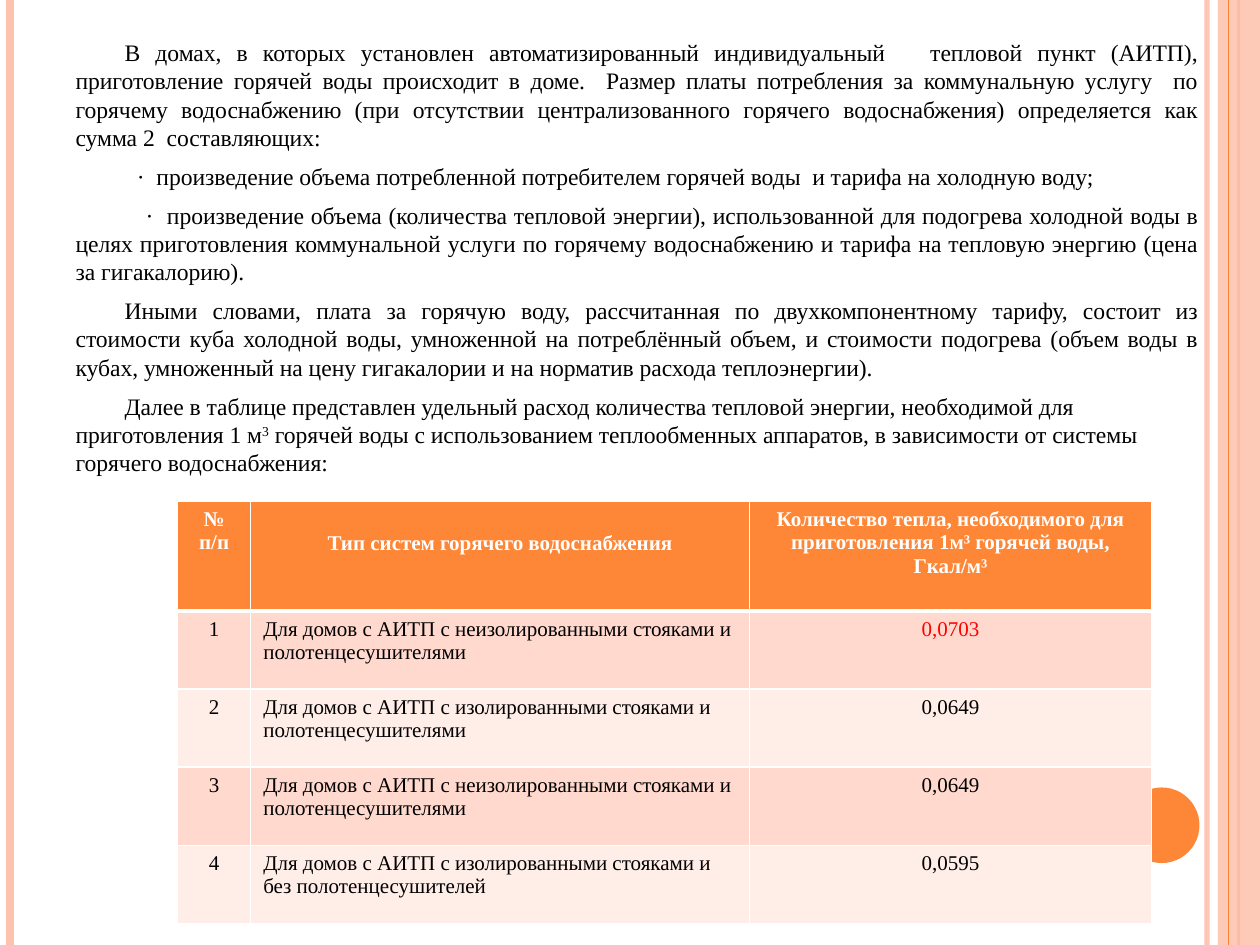
from dataclasses import dataclass

from lxml import etree
from pptx import Presentation
from pptx import util as u
from pptx.dml import color
from pptx.enum import shapes, text
from pptx.oxml import ns

Pt = u.Pt
FONT = "Times New Roman"
ORANGE, PEACH, WHITE, BLACK, RED = "FE8637", "FEC3AE", "FFFFFF", "000000", "FF0000"
BANDS = ("FFD9CE", "FFEDE8")
LEFT, CENTER, JUSTIFY = text.PP_ALIGN.LEFT, text.PP_ALIGN.CENTER, text.PP_ALIGN.JUSTIFY


@dataclass
class Stripe:
    x: float
    width: float
    hue: str
    opacity: int = 100


@dataclass
class Span:
    words: str
    raised: bool = False


@dataclass
class Para:
    spans: list[Span]
    indent: float = 28
    align: text.PP_ALIGN = JUSTIFY


@dataclass
class Cell:
    words: str
    fill: str
    hue: str = BLACK
    bold: bool = False
    align: text.PP_ALIGN = CENTER
    top: float = 3.6
    bottom_line: float = 1


STRIPES = [
    Stripe(689.76, 3, PEACH, 93),
    Stripe(5.76, 4.5, PEACH),
    Stripe(707.76, 1.5, ORANGE),
    Stripe(702, 0.75, ORANGE),
]

PARAS = [
    Para([Span("В домах, в которых установлен автоматизированный индивидуальный   тепловой пункт (АИТП), приготовление горячей воды происходит в доме.  Размер платы потребления за коммунальную услугу  по горячему водоснабжению (при отсутствии централизованного горячего водоснабжения) определяется как сумма 2  составляющих:")]),
    Para([Span("·  произведение объема потребленной потребителем горячей воды  и тарифа на холодную воду;")], 35),
    Para([Span("·  произведение объема (количества тепловой энергии), использованной для подогрева холодной воды в целях приготовления коммунальной услуги по горячему водоснабжению и тарифа на тепловую энергию (цена за гигакалорию).")], 40),
    Para([Span("Иными словами, плата за горячую воду, рассчитанная по двухкомпонентному тарифу, состоит из стоимости куба холодной воды, умноженной на потреблённый объем, и стоимости подогрева (объем воды в кубах, умноженный на цену гигакалории и на норматив расхода теплоэнергии).")]),
    Para([
        Span("Далее в таблице представлен удельный расход количества тепловой энергии, необходимой для приготовления 1 м"),
        Span("3", raised=True),
        Span(" горячей воды с использованием теплообменных аппаратов, в зависимости от системы горячего водоснабжения:"),
    ], align=LEFT),
]

HEADERS = [
    ("№ п/п", 3.6),
    ("Тип систем горячего водоснабжения", 17.4),
    ("Количество тепла, необходимого для приготовления 1м³ горячей воды, Гкал/м³", 3.6),
]
SYSTEMS = [
    ("с неизолированными стояками и полотенцесушителями", "0,0703", RED),
    ("с изолированными стояками и полотенцесушителями", "0,0649", BLACK),
    ("с неизолированными стояками и полотенцесушителями", "0,0649", BLACK),
    ("с изолированными стояками и без полотенцесушителей", "0,0595", BLACK),
]
COLUMN_WIDTHS = (41.76, 285.12, 229.68)
ROW_HEIGHTS = (62.64,) + (44.64,) * len(SYSTEMS)


def rgb(value: str) -> color.RGBColor:
    return color.RGBColor.from_string(value)


def set_opacity(element, percent: int) -> None:
    for tone in element.iter(ns.qn("a:srgbClr")):
        etree.SubElement(tone, ns.qn("a:alpha"), val=str(percent * 1000))


def draw_stripe(page, stripe: Stripe) -> None:
    line = page.shapes.add_connector(
        shapes.MSO_CONNECTOR.STRAIGHT, Pt(stripe.x), 0, Pt(stripe.x), Pt(540))
    line.line.width = Pt(stripe.width)
    line.line.color.rgb = rgb(stripe.hue)
    properties = line._element.spPr
    etree.SubElement(properties, ns.qn("a:effectLst"))
    if stripe.opacity < 100:
        set_opacity(properties, stripe.opacity)


def draw_shape(page, kind, box: tuple, hue: str, opacity: int = 100) -> None:
    shape = page.shapes.add_shape(kind, *map(Pt, box))
    shape.shadow.inherit = False
    shape.fill.solid()
    shape.fill.fore_color.rgb = rgb(hue)
    shape.line.fill.background()
    if opacity < 100:
        set_opacity(shape._element.spPr, opacity)


def add_span(para, words: str, size: float, hue: str, bold: bool = False):
    span = para.add_run()
    span.text = words
    span.font.name = FONT
    span.font.size = Pt(size)
    span.font.bold = bold
    span.font.color.rgb = rgb(hue)
    return span


def write_body(box, paras: list[Para]) -> None:
    box.left, box.top, box.width, box.height = map(Pt, (36, 18, 656, 510.5))
    frame = box.text_frame
    frame.word_wrap = True
    frame.auto_size = text.MSO_AUTO_SIZE.NONE
    for number, item in enumerate(paras):
        para = frame.add_paragraph() if number else frame.paragraphs[0]
        para.alignment = item.align
        para.space_before = Pt(6)
        properties = para._p.get_or_add_pPr()
        properties.set("marL", "0")
        properties.set("indent", str(Pt(item.indent)))
        etree.SubElement(properties, ns.qn("a:buNone"))
        for part in item.spans:
            span = add_span(para, part.words, 13.5, BLACK)
            if part.raised:
                span.font._element.set("baseline", "30000")


def add_border(cell, side: str, width: float) -> None:
    line = etree.Element(ns.qn(f"a:ln{side}"), w=str(Pt(width)))
    fill = etree.SubElement(line, ns.qn("a:solidFill"))
    etree.SubElement(fill, ns.qn("a:srgbClr"), val=WHITE)
    cell._tc.get_or_add_tcPr().append(line)


def fill_cell(cell, item: Cell, top_line: float) -> None:
    for side, width in zip("LRTB", (1, 1, top_line, item.bottom_line)):
        add_border(cell, side, width)
    cell.fill.solid()
    cell.fill.fore_color.rgb = rgb(item.fill)
    cell.margin_top = Pt(item.top)
    para = cell.text_frame.paragraphs[0]
    para.alignment = item.align
    add_span(para, item.words, 12, item.hue, item.bold)


def draw_table(page, rows: list[list[Cell]]) -> None:
    table = page.shapes.add_table(
        len(rows), len(COLUMN_WIDTHS), Pt(101.52), Pt(286.56),
        Pt(sum(COLUMN_WIDTHS)), Pt(sum(ROW_HEIGHTS))).table
    for column, width in zip(table.columns, COLUMN_WIDTHS):
        column.width = Pt(width)
    for row, height in zip(table.rows, ROW_HEIGHTS):
        row.height = Pt(height)
    for r, row in enumerate(rows):
        for c, item in enumerate(row):
            fill_cell(table.cell(r, c), item, rows[r - 1][c].bottom_line if r else 1)


def table_rows() -> list[list[Cell]]:
    rows = [[Cell(words, ORANGE, WHITE, True, top=top, bottom_line=3) for words, top in HEADERS]]
    for number, (system, value, hue) in enumerate(SYSTEMS):
        band = BANDS[number % 2]
        rows.append([
            Cell(str(number + 1), band),
            Cell(f"Для домов с АИТП {system}", band, align=LEFT),
            Cell(value, band, hue),
        ])
    return rows


def main() -> None:
    deck = Presentation()
    deck.slide_width, deck.slide_height = Pt(720), Pt(540)
    page = deck.slides.add_slide(deck.slide_layouts[1])
    title = page.shapes.title._element
    title.getparent().remove(title)
    write_body(page.placeholders[1], PARAS)
    for stripe in STRIPES[:3]:
        draw_stripe(page, stripe)
    draw_shape(page, shapes.MSO_SHAPE.RECTANGLE, (696, 0, 24, 540), PEACH, 87)
    draw_stripe(page, STRIPES[3])
    draw_shape(page, shapes.MSO_SHAPE.OVAL, (642.24, 450, 43.2, 43.2), ORANGE)
    draw_table(page, table_rows())
    deck.save("out.pptx")


if __name__ == "__main__":
    main()
